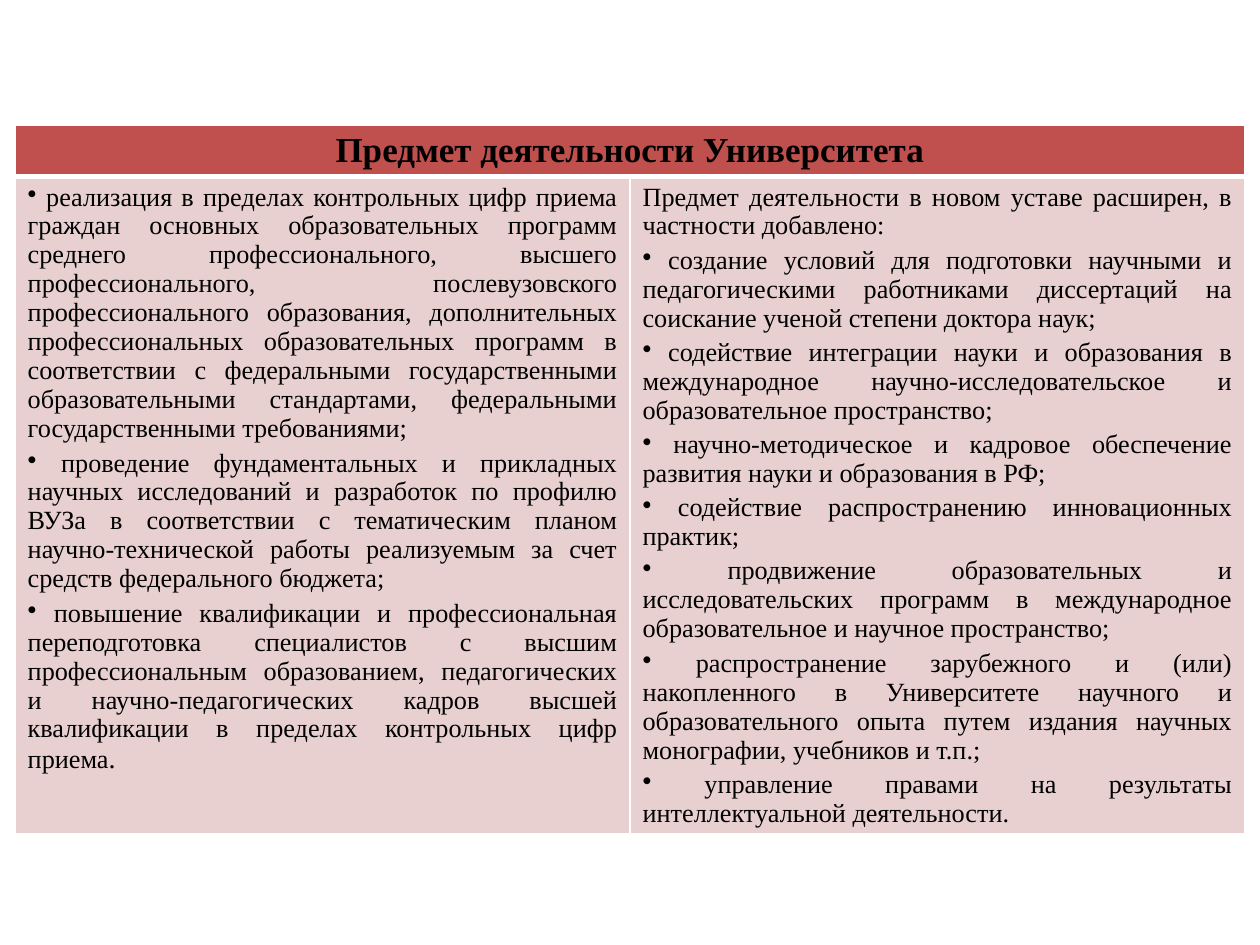
import pptx
import pptx.dml.color
import pptx.enum.text
import pptx.oxml
import pptx.oxml.ns
import pptx.util

ALIGN = pptx.enum.text.PP_ALIGN
RGB = pptx.dml.color.RGBColor.from_string

theme = {
    "font": "Times New Roman",
    "text": "000000",
    "header_fill": "C0504D",
    "body_fill": "E8D0D0",
    "border": "FFFFFF",
    "header_size": 20,
    "body_size": 15,
    "final_stop_size": 16,
    "space_share": 0.2,
}

heading = "Предмет деятельности Университета"
final_stop = "."
current_subject = [
    "реализация в пределах контрольных цифр приема граждан основных образовательных программ "
    "среднего профессионального, высшего профессионального, послевузовского профессионального "
    "образования, дополнительных профессиональных образовательных программ в соответствии с "
    "федеральными государственными образовательными стандартами, федеральными государственными "
    "требованиями;",
    "проведение фундаментальных и прикладных научных исследований и разработок по профилю ВУЗа "
    "в соответствии с тематическим планом научно-технической работы реализуемым за счет средств "
    "федерального бюджета;",
    "повышение квалификации и профессиональная переподготовка специалистов с высшим "
    "профессиональным образованием, педагогических и научно-педагогических кадров высшей "
    "квалификации в пределах контрольных цифр приема",
]
additions_intro = "Предмет деятельности в новом уставе расширен, в частности добавлено:"
additions = [
    "создание условий для подготовки научными и педагогическими работниками диссертаций на "
    "соискание ученой степени доктора наук;",
    "содействие интеграции науки и образования в международное научно-исследовательское и "
    "образовательное пространство;",
    "научно-методическое и кадровое обеспечение развития науки и образования в РФ;",
    "содействие распространению инновационных практик;",
    "продвижение образовательных и исследовательских программ в международное образовательное "
    "и научное пространство;",
    "распространение зарубежного и (или) накопленного в Университете научного и "
    "образовательного опыта путем издания научных монографии, учебников и т.п.;",
    "управление правами на результаты интеллектуальной деятельности.",
]


def add_run(paragraph, text, size, bold=False):
    run = paragraph.add_run()
    run.text = text
    font_format = {"name": theme["font"], "size": pptx.util.Pt(size), "bold": bold}
    for name, value in font_format.items():
        setattr(run.font, name, value)
    run.font.color.rgb = RGB(theme["text"])


def style_cell(cell, fill, bottom_width):
    cell.fill.solid()
    cell.fill.fore_color.rgb = RGB(fill)
    widths = {"lnL": 1, "lnR": 1, "lnT": 1, "lnB": bottom_width}
    for position, (edge, width) in enumerate(widths.items()):
        line = pptx.oxml.parse_xml(
            f'<a:{edge} {pptx.oxml.ns.nsdecls("a")} w="{pptx.util.Pt(width)}">'
            f'<a:solidFill><a:srgbClr val="{theme["border"]}"/></a:solidFill></a:{edge}>'
        )
        cell._tc.get_or_add_tcPr().insert(position, line)


# Slide
deck = pptx.Presentation()
deck.slide_width, deck.slide_height = pptx.util.Inches(10), pptx.util.Inches(7.5)
slide = deck.slides.add_slide(deck.slide_layouts[6])

# Table grid: two equal columns between equal side margins
margin = pptx.util.Inches(0.12)
table_width = deck.slide_width - 2 * margin
row_heights = [pptx.util.Inches(0.41), pptx.util.Inches(5.2)]
subjects = slide.shapes.add_table(
    2, 2, margin, pptx.util.Inches(0.99), table_width, sum(row_heights)
).table
for row, height in zip(subjects.rows, row_heights):
    row.height = height
for column in subjects.columns:
    column.width = table_width // 2

# Fills and borders, with a heavier rule under the heading
for row, fill, bottom_width in [(0, theme["header_fill"], 3), (1, theme["body_fill"], 1)]:
    for column in range(2):
        style_cell(subjects.cell(row, column), fill, bottom_width)
subjects.cell(1, 0)._tc.tcPr.find(pptx.oxml.ns.qn("a:lnT")).set("w", str(pptx.util.Pt(3)))
subjects.cell(1, 1)._tc.tcPr.find(pptx.oxml.ns.qn("a:lnT")).set("w", str(pptx.util.Pt(3)))

# Heading across both columns
subjects.cell(0, 0).merge(subjects.cell(0, 1))
heading_line = subjects.cell(0, 0).text_frame.paragraphs[0]
heading_line.alignment = ALIGN.CENTER
add_run(heading_line, heading, theme["header_size"], bold=True)

# Justified lists; the space after each bullet stretches with its line
columns = [
    [(item, True) for item in current_subject],
    [(additions_intro, False)] + [(item, True) for item in additions],
]
for column, items in enumerate(columns):
    frame = subjects.cell(1, column).text_frame
    for index, (text, bulleted) in enumerate(items):
        paragraph = frame.add_paragraph() if index else frame.paragraphs[0]
        paragraph.alignment = ALIGN.JUSTIFY
        if index:
            paragraph.space_before = pptx.util.Pt(theme["space_share"] * theme["body_size"])
        if bulleted:
            paragraph._p.get_or_add_pPr().append(pptx.oxml.parse_xml(
                f'<a:buChar {pptx.oxml.ns.nsdecls("a")} char="•"/>'
            ))
        add_run(paragraph, " " + text if bulleted else text, theme["body_size"])

# Larger full stop closing the first list
add_run(subjects.cell(1, 0).text_frame.paragraphs[-1], final_stop, theme["final_stop_size"])

deck.save("out.pptx")
